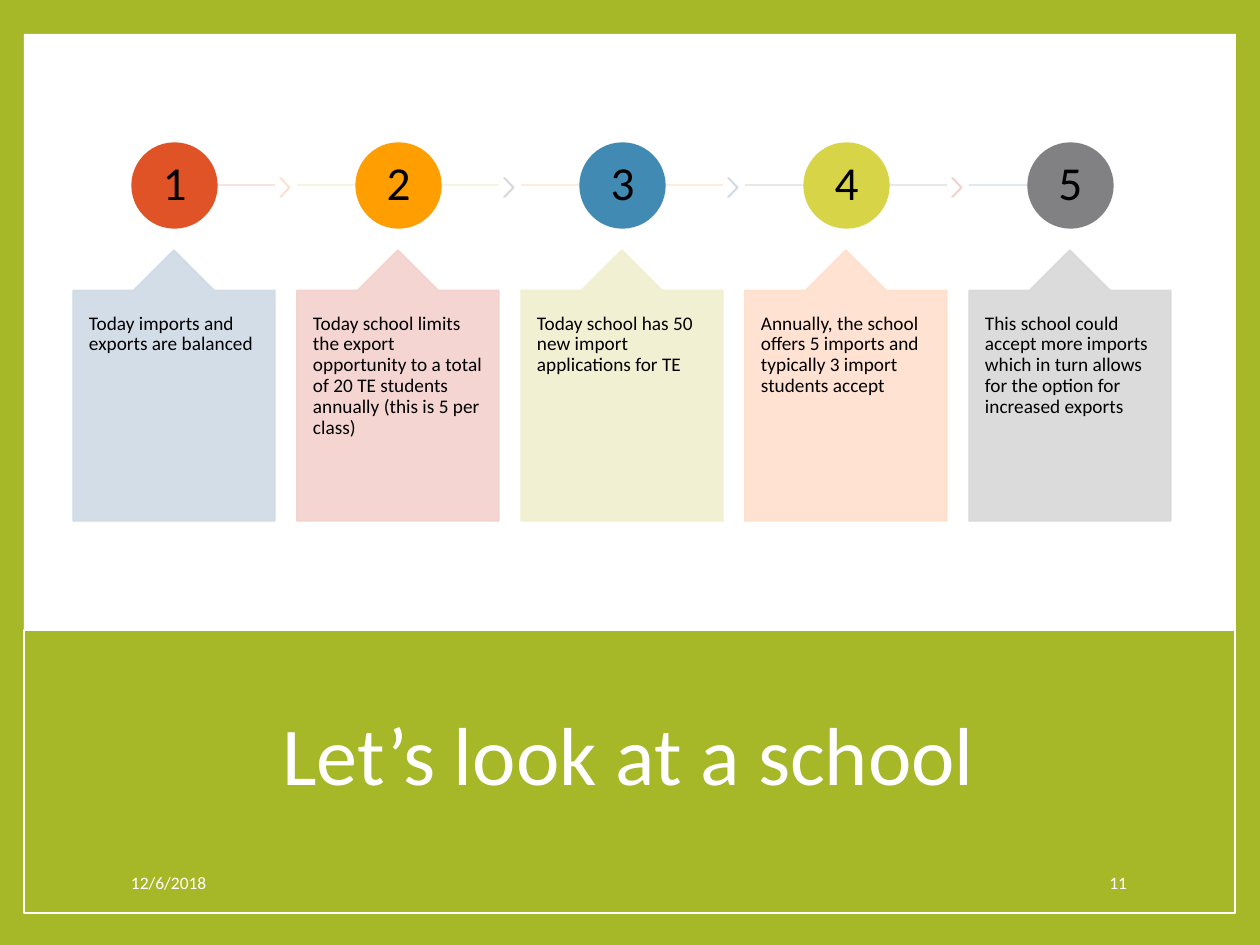
from dataclasses import dataclass

import pptx
import pptx.dml.color
import pptx.enum.shapes
import pptx.enum.text
import pptx.oxml.ns
import pptx.util
from lxml import etree

SCALE = 914400 / 126  # EMU per px
GREEN, WHITE, BLACK = "A6B727", "FFFFFF", "000000"
FONT = "Calibri"
SHAPE = pptx.enum.shapes.MSO_SHAPE
ALIGN = pptx.enum.text.PP_ALIGN
ANCHOR = pptx.enum.text.MSO_ANCHOR

# Step grid
LEFT, PITCH, CARD_W = 73, 224, 202
CARD_TOP, CARD_H = 250, 271
CIRCLE_TOP, CIRCLE_D = 143, 85
LINE_Y = 185
TINT_ALPHA = 90


@dataclass
class Step:
    text: str
    circle: str
    card: str
    line: str
    chevron: str = ""


STEPS = [
    Step("Today imports and exports are balanced",
         "DF5327", "CFDAE5", "F3D1CD", "FFDFCC"),
    Step("Today school limits the export opportunity to a total of 20 TE "
         "students annually (this is 5 per class)",
         "FE9E00", "F3D1CD", "F0EFCF", "D8D8D9"),
    Step("Today school has 50 new import applications for TE",
         "418AB3", "F0EFCF", "FFDFCC", "CFDAE5"),
    Step("Annually, the school offers 5 imports and typically 3 import "
         "students accept",
         "D7D447", "FFDFCC", "D8D8D9", "F3D1CD"),
    Step("This school could accept more imports which in turn allows for "
         "the option for increased exports",
         "818183", "D8D8D9", "CFDAE5"),
]


def px(n: float) -> int:
    return round(n * SCALE)


def rgb(color: str) -> pptx.dml.color.RGBColor:
    return pptx.dml.color.RGBColor.from_string(color)


def set_alpha(s, percent: int) -> None:
    """Make every solid colour of a shape's fill and line translucent."""
    for clr in s._element.spPr.iter(pptx.oxml.ns.qn("a:srgbClr")):
        alpha = etree.SubElement(clr, pptx.oxml.ns.qn("a:alpha"))
        alpha.set("val", str(percent * 1000))


def add_shape(sp, kind, x: int, y: int, w: int, h: int, fill: str,
              line: str = "", width: float = 0.79, alpha: int = 100,
              adj: tuple = ()):
    s = sp.add_shape(kind, px(x), px(y), px(w), px(h))
    s.shadow.inherit = False
    for i, value in enumerate(adj):
        s.adjustments[i] = value
    s.fill.solid()
    s.fill.fore_color.rgb = rgb(fill)
    if line:
        s.line.color.rgb = rgb(line)
        s.line.width = pptx.util.Pt(width)
    else:
        s.line.fill.background()
    if alpha < 100:
        set_alpha(s, alpha)
    return s


def add_line(sp, x1: int, x2: int, y: int, color: str) -> None:
    s = sp.add_connector(pptx.enum.shapes.MSO_CONNECTOR.STRAIGHT,
                         px(x1), px(y), px(x2), px(y))
    s.line.color.rgb = rgb(color)
    s.line.width = pptx.util.Pt(0.79)
    set_alpha(s, TINT_ALPHA)
    etree.SubElement(s._element.spPr, pptx.oxml.ns.qn("a:effectLst"))


def set_text(s, text: str, *, size: int, color: str = BLACK,
             align=ALIGN.LEFT, anchor=ANCHOR.MIDDLE, spacing: float = 1.0,
             inset: tuple = (13, 6)) -> None:
    tf = s.text_frame
    tf.word_wrap = True
    tf.vertical_anchor = anchor
    tf.margin_left = tf.margin_right = px(inset[0])
    tf.margin_top = tf.margin_bottom = px(inset[1])
    p = tf.paragraphs[0]
    p.alignment = align
    p.line_spacing = spacing
    r = p.add_run()
    r.text = text
    r.font.name = FONT
    r.font.size = pptx.util.Pt(size)
    r.font.color.rgb = rgb(color)


def add_text(sp, x: int, y: int, w: int, h: int, text: str, **fmt) -> None:
    set_text(sp.add_textbox(px(x), px(y), px(w), px(h)), text, **fmt)


def add_step(sp, i: int, step: Step) -> None:
    x = LEFT + i * PITCH
    mid = x + CARD_W // 2

    # Line behind the circle; the first and last steps have only half of it
    start = mid + 11 if i == 0 else x
    end = mid if i == len(STEPS) - 1 else x + CARD_W
    add_line(sp, start, end, LINE_Y, step.line)
    if step.chevron:
        add_shape(sp, SHAPE.CHEVRON, x + 207, 178, 10, 19, step.chevron,
                  step.chevron, alpha=TINT_ALPHA, adj=(0.9,))

    # Numbered circle
    s = add_shape(sp, SHAPE.OVAL, mid - CIRCLE_D // 2, CIRCLE_TOP,
                  CIRCLE_D, CIRCLE_D, step.circle, step.circle)
    set_text(s, str(i + 1), size=27, align=ALIGN.CENTER, spacing=0.9,
             inset=(4, 4))

    # Card pointing up at the circle
    s = add_shape(sp, SHAPE.UP_ARROW_CALLOUT, x, CARD_TOP, CARD_W, CARD_H,
                  step.card, step.card, alpha=TINT_ALPHA,
                  adj=(0.5, 0.2, 0.2, 1))
    set_text(s, step.text, size=11, anchor=ANCHOR.TOP, spacing=0.9,
             inset=(16, 23))


def main() -> None:
    prs = pptx.Presentation()
    prs.slide_width, prs.slide_height = px(1260), px(945)
    sp = prs.slides.add_slide(prs.slide_layouts[6]).shapes

    # Frame and title panel
    add_shape(sp, SHAPE.RECTANGLE, 0, 0, 1260, 945, GREEN)
    add_shape(sp, SHAPE.RECTANGLE, 24, 34, 1212, 878, WHITE)
    add_shape(sp, SHAPE.RECTANGLE, 24, 630, 1211, 283, GREEN, WHITE, 1)

    # Title and footer
    add_text(sp, 118, 665, 1021, 187, "Let’s look at a school", size=47,
             color=WHITE, align=ALIGN.CENTER, spacing=0.9)
    add_text(sp, 118, 858, 241, 50, "12/6/2018", size=10, color=WHITE)
    add_text(sp, 964, 858, 176, 50, "11", size=10, color=WHITE,
             align=ALIGN.RIGHT)

    # Five steps
    for i, step in enumerate(STEPS):
        add_step(sp, i, step)

    prs.save("out.pptx")


if __name__ == "__main__":
    main()
